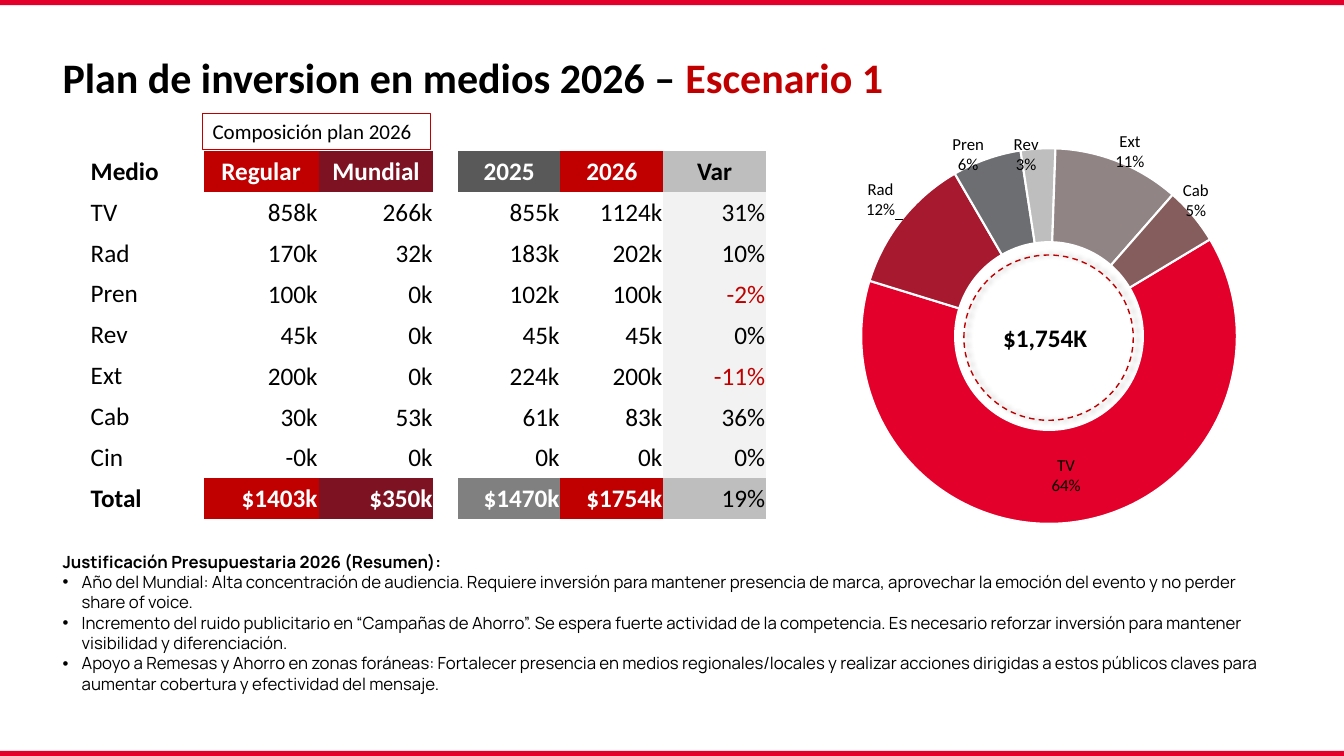
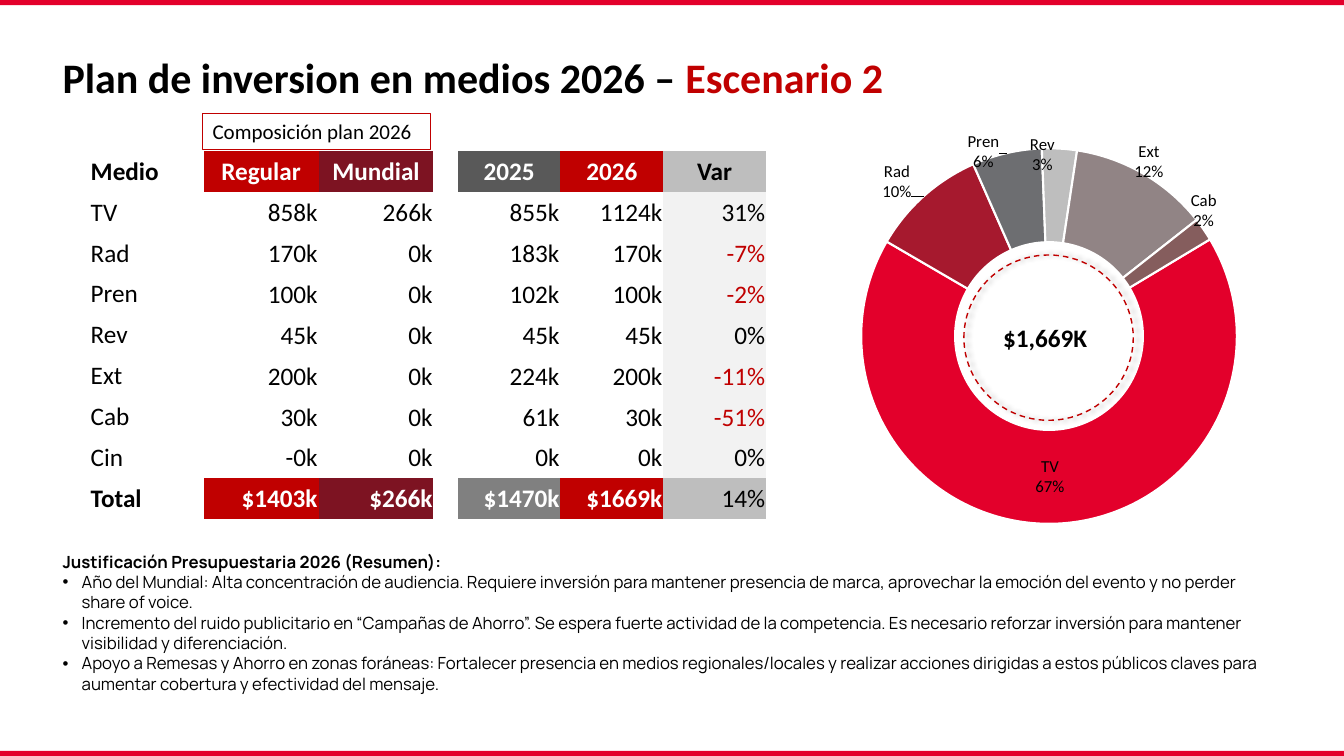
from copy import deepcopy

from pptx import Presentation
from pptx.chart import data as chart_data
from pptx.dml.color import RGBColor
from pptx.enum import chart as charts, dml, shapes, text
from pptx.oxml import parse_xml
from pptx.oxml.ns import nsdecls
from pptx.util import Inches, Pt

COLORS = {
    "band": "E3002B", "red": "C00000", "wine": "7D1322", "dark": "595959",
    "gray": "808080", "silver": "BEBEBE", "pale": "F2F2F2",
    "black": "000000", "white": "FFFFFF",
}
SLICES = ["E3002B", "A6192E", "6D6E71", "BEBEBE", "918485", "855D5D"]
# Label shift for each slice after the first, as a share of the chart size
LABEL_SHIFTS = [(-0.12, -0.12), (-0.07, -0.12), (-0.03, -0.1), (0.06, -0.13), (0.08, -0.11)]
PLAIN_TABLE = "{2D5ABB26-0587-4C30-8999-92F81FD0307C}"

MEDIA = ["TV", "Rad", "Pren", "Rev", "Ext", "Cab", "Cin", "Total"]
REGULAR = ["858k", "170k", "100k", "45k", "200k", "30k", "-0k", "$1403k"]
LAST_YEAR = ["855k", "183k", "102k", "45k", "224k", "61k", "0k", "$1470k"]
HEADER = ["Medio", "", "Regular", "Mundial", "", "2025", "2026", "Var"]
COLUMN_WIDTHS = [0.91, 0.31, 1.14, 1.14, 0.24, 1.02, 1.02, 1.02]
HEADER_FILLS = {2: "red", 3: "wine", 5: "dark", 6: "red", 7: "silver"}
TOTAL_FILLS = {**HEADER_FILLS, 5: "gray"}

SCENARIOS = [
    {
        "name": "Escenario 1", "total": "$1,754K",
        "mundial": ["266k", "32k", "0k", "0k", "0k", "53k", "0k", "$350k"],
        "plan": ["1124k", "202k", "100k", "45k", "200k", "83k", "0k", "$1754k"],
        "change": ["31%", "10%", "-2%", "0%", "-11%", "36%", "0%", "19%"],
        "shares": [64, 12, 6, 3, 11, 5],
    },
    {
        "name": "Escenario 2", "total": "$1,669K",
        "mundial": ["266k", "0k", "0k", "0k", "0k", "0k", "0k", "$266k"],
        "plan": ["1124k", "170k", "100k", "45k", "200k", "30k", "0k", "$1669k"],
        "change": ["31%", "-7%", "-2%", "0%", "-11%", "-51%", "0%", "14%"],
        "shares": [67, 10, 6, 3, 12, 2],
    },
]
REASONS_TITLE = "Justificación Presupuestaria 2026 (Resumen):"
REASONS = [
    "Año del Mundial: Alta concentración de audiencia. Requiere inversión para mantener "
    "presencia de marca, aprovechar la emoción del evento y no perder share of voice.",
    "Incremento del ruido publicitario en “Campañas de Ahorro”. Se espera fuerte actividad de "
    "la competencia. Es necesario reforzar inversión para mantener visibilidad y diferenciación.",
    "Apoyo a Remesas y Ahorro en zonas foráneas: Fortalecer presencia en medios "
    "regionales/locales y realizar acciones dirigidas a estos públicos claves para aumentar "
    "cobertura y efectividad del mensaje.",
]


def rgb(name):
    return RGBColor.from_string(COLORS[name])


def add_span(para, words, size, color="black", bold=False, font="Calibri"):
    span = para.add_run()
    span.text = words
    span.font.size = Pt(size)
    span.font.name = font
    span.font.bold = bold
    span.font.color.rgb = rgb(color)


def place(shape, box):
    shape.left, shape.top, shape.width, shape.height = (Inches(length) for length in box)


def add_outline(page, kind, box, width):
    """Unfilled red outline."""
    shape = page.shapes.add_shape(kind, *(Inches(length) for length in box))
    shape.shadow.inherit = False
    shape.fill.background()
    shape.line.color.rgb = rgb("red")
    shape.line.width = Pt(width)
    return shape


def add_master_bands(deck, page):
    """Top and bottom bands, moved to the master so every slide shows them."""
    tree = deck.slide_master.element.cSld.spTree
    for number, top in enumerate((0, 7.45)):
        band = page.shapes.add_shape(
            shapes.MSO_SHAPE.RECTANGLE, 0, Inches(top), deck.slide_width, Inches(0.05))
        band.shadow.inherit = False
        band.fill.solid()
        band.fill.fore_color.rgb = rgb("band")
        band.line.fill.background()
        band.element.nvSpPr.cNvPr.set("id", str(100 + number))
        tree.append(band.element)


def write_title(page, box, scenario_name):
    title = page.shapes.title
    place(title, box)
    frame = title.text_frame
    frame.word_wrap = False
    frame.auto_size = text.MSO_AUTO_SIZE.NONE
    frame.vertical_anchor = text.MSO_ANCHOR.TOP
    para = frame.paragraphs[0]
    para.alignment = text.PP_ALIGN.LEFT
    add_span(para, "Plan de inversion en medios 2026 – ", 30, bold=True)
    add_span(para, scenario_name, 30, "red", bold=True)


def write_reasons(page, box):
    body = page.placeholders[1]
    place(body, box)
    frame = body.text_frame
    frame.auto_size = text.MSO_AUTO_SIZE.NONE
    for index, words in enumerate([REASONS_TITLE] + REASONS):
        para = frame.add_paragraph() if index else frame.paragraphs[0]
        properties = para._p.get_or_add_pPr()
        indent = Inches(0.19) if index else 0
        properties.set("marL", str(indent))
        properties.set("indent", str(-indent))
        bullet = '<a:buChar %s char="•"/>' if index else "<a:buNone %s/>"
        properties.append(parse_xml(bullet % nsdecls("a")))
        para.space_before = Pt(0)
        para.line_spacing = Pt(14.5)
        add_span(para, words, 12, bold=index == 0, font="Manrope")


def write_cell(cell, words, row, column, last_row):
    is_header, is_total = row == 0, row == last_row
    fills = HEADER_FILLS if is_header else TOTAL_FILLS if is_total else {7: "pale"}
    if column in fills:
        cell.fill.solid()
        cell.fill.fore_color.rgb = rgb(fills[column])
    else:
        cell.fill.background()
    para = cell.text_frame.paragraphs[0]
    if column:
        cell.vertical_anchor = text.MSO_ANCHOR.MIDDLE
        para.alignment = text.PP_ALIGN.CENTER if is_header else text.PP_ALIGN.RIGHT
        if not is_header:
            cell.margin_left = cell.margin_right = cell.margin_top = Inches(0.01)
            cell.margin_bottom = 0
    elif is_total:
        cell.vertical_anchor = text.MSO_ANCHOR.MIDDLE
    if not words:
        para.font.size = Pt(12)
        return
    color = "black"
    if (is_header or is_total) and 0 < column < 7:
        color = "white"
    elif column == 7 and words.startswith("-"):
        color = "red"
    add_span(para, words, 18, color, bold=is_header or (is_total and column < 7))


def add_plan_table(page, box, scenario):
    blanks = [""] * len(MEDIA)
    rows = [HEADER, *zip(MEDIA, blanks, REGULAR, scenario["mundial"], blanks,
                         LAST_YEAR, scenario["plan"], scenario["change"])]
    frame = page.shapes.add_table(
        len(rows), len(HEADER), *(Inches(length) for length in box))
    frame.element.xpath(".//a:tableStyleId")[0].text = PLAIN_TABLE
    table = frame.table
    table.first_row = table.horz_banding = False
    for column, width in zip(table.columns, COLUMN_WIDTHS):
        column.width = Inches(width)
    for row, values in enumerate(rows):
        table.rows[row].height = Inches(box[3] / len(rows))
        for column, words in enumerate(values):
            write_cell(table.cell(row, column), words, row, column, len(rows) - 1)

    # Caption over the Regular and Mundial columns
    left, top = box[:2]
    caption = add_outline(page, shapes.MSO_SHAPE.RECTANGLE,
                          (left + 1.21, top - 0.37, 2.26, 0.35), 0.75)
    caption.text_frame.word_wrap = True
    para = caption.text_frame.paragraphs[0]
    para.alignment = text.PP_ALIGN.LEFT
    add_span(para, "Composición plan 2026", 15)


def label_slices(series):
    labels = series.data_labels
    labels.show_value = labels.show_category_name = True
    labels.show_percentage = False
    labels.number_format = '0"%"'
    labels.number_format_is_linked = False
    labels.font.size = Pt(12)
    labels.font.name = "Calibri"
    labels.font.color.rgb = rgb("black")
    group = series._element.xpath("c:dLbls")[0]
    group.xpath("c:showBubbleSize")[0].addnext(
        parse_xml("<c:separator %s>\n</c:separator>" % nsdecls("c")))
    shared = [part for part in group if not part.tag.endswith("showLeaderLines")]
    for index, (across, down) in enumerate(LABEL_SHIFTS):
        label = parse_xml(
            f'<c:dLbl {nsdecls("c")}><c:idx val="{index + 1}"/><c:layout><c:manualLayout>'
            f'<c:x val="{across}"/><c:y val="{down}"/></c:manualLayout></c:layout></c:dLbl>')
        for part in shared:
            label.append(deepcopy(part))
        group.insert(index, label)


def add_share_chart(page, box, scenario):
    source = chart_data.CategoryChartData()
    source.categories = MEDIA[:len(SLICES)]
    source.add_series("Series 1", scenario["shares"])
    chart = page.shapes.add_chart(
        charts.XL_CHART_TYPE.DOUGHNUT, *(Inches(length) for length in box), source).chart
    chart.has_legend = chart.has_title = False
    chart.font.size = Pt(10)
    chart.font.name = "Arial"
    chart.font.color.rgb = rgb("black")
    plot = chart.plots[0]
    plot.vary_by_categories = True
    series = plot.series[0]
    for index, color in enumerate(SLICES):
        look = series.points[index].format
        look.fill.solid()
        look.fill.fore_color.rgb = RGBColor.from_string(color)
        look.line.color.rgb = rgb("white")
        look.line.width = Pt(1.5)
    label_slices(series)

    # Ring geometry
    ring = chart.element.xpath(".//c:doughnutChart")[0]
    for tag, value in (("firstSliceAng", 59), ("holeSize", 65)):
        for old in ring.xpath("c:" + tag):
            ring.remove(old)
        ring.append(parse_xml(f'<c:{tag} {nsdecls("c")} val="{value}"/>'))
    area = chart.element.xpath(".//c:plotArea")[0]
    for old in area.xpath("c:layout"):
        area.remove(old)
    area.insert(0, parse_xml(
        f'<c:layout {nsdecls("c")}><c:manualLayout><c:layoutTarget val="inner"/>'
        '<c:xMode val="edge"/><c:yMode val="edge"/><c:x val="0.11"/><c:y val="0.04"/>'
        '<c:w val="0.78"/><c:h val="0.92"/></c:manualLayout></c:layout>'))

    # Dashed circle and total in the hole
    left, top = box[:2]
    circle = add_outline(page, shapes.MSO_SHAPE.OVAL, (left + 1.56, top + 1.22, 1.68, 1.64), 1)
    circle.line.dash_style = dml.MSO_LINE.DASH
    circle.element.xpath(".//a:effectLst")[0].append(parse_xml(
        f'<a:outerShdw {nsdecls("a")} blurRad="{Pt(4)}" dist="{Pt(3)}" dir="0">'
        f'<a:srgbClr val="{COLORS["black"]}"><a:alpha val="40000"/></a:srgbClr></a:outerShdw>'))
    total = page.shapes.add_textbox(
        Inches(left + 1.85), Inches(top + 1.84), Inches(1.12), Inches(0.4))
    total.text_frame.word_wrap = False
    add_span(total.text_frame.paragraphs[0], scenario["total"], 18, bold=True)


def build_scenario(page, scenario):
    write_title(page, (0.52, 0.46, 8.96, 0.61), scenario["name"])
    add_plan_table(page, (0.8, 1.5, 6.8, 3.65), scenario)
    write_reasons(page, (0.52, 5.42, 12.08, 1.51))
    add_share_chart(page, (8, 1.31, 4.81, 4.05), scenario)


def main():
    deck = Presentation()
    deck.slide_width, deck.slide_height = Inches(13.33), Inches(7.5)
    pages = [deck.slides.add_slide(deck.slide_layouts[1]) for _ in SCENARIOS]
    add_master_bands(deck, pages[0])
    for page, scenario in zip(pages, SCENARIOS):
        build_scenario(page, scenario)
    deck.save("out.pptx")


if __name__ == "__main__":
    main()
